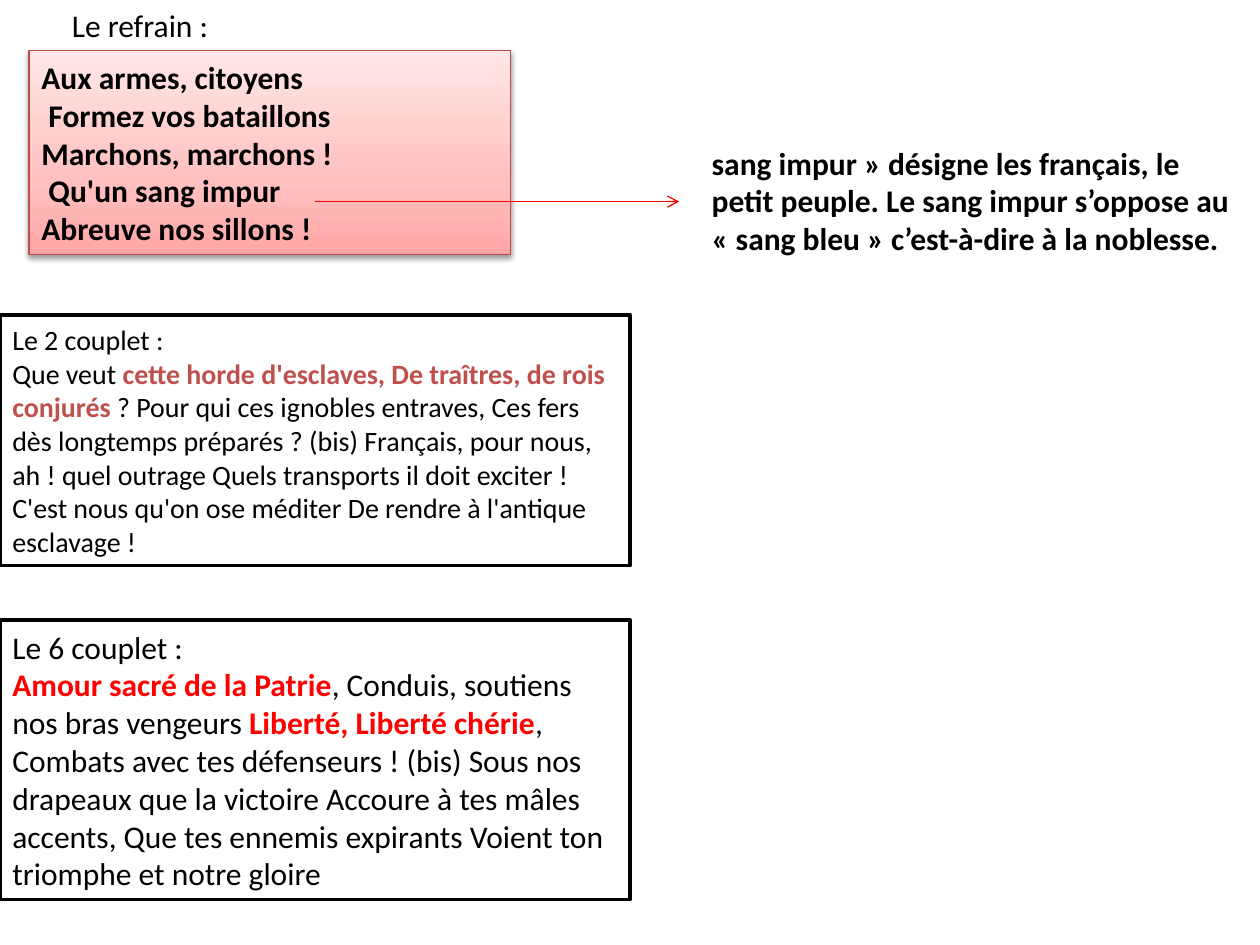
from lxml.etree import SubElement
from pptx import Presentation
from pptx.dml.color import RGBColor
from pptx.enum.shapes import MSO_CONNECTOR, MSO_SHAPE
from pptx.enum.text import MSO_ANCHOR, MSO_AUTO_SIZE, PP_ALIGN
from pptx.oxml import parse_xml
from pptx.oxml.ns import nsdecls, qn
from pptx.util import Inches, Pt

COLUMNS, ROWS = 100, 75
BLACK, WHITE, RED, BRICK = "000000", "FFFFFF", "FF0000", "C0504D"
REFRAIN_LINES = ["Aux armes, citoyens", " Formez vos bataillons", "Marchons, marchons !",
                 " Qu'un sang impur", "Abreuve nos sillons !"]
REFRAIN_STOPS = [(0, "FFA6A5"), (35, "FFC0BF"), (100, "FFE7E7")]
SANG_IMPUR = ("sang impur » désigne les français, le petit peuple. Le sang impur s’oppose au "
              "« sang bleu » c’est-à-dire à la noblesse.")
# Each verse is split so that every second part is highlighted
COUPLET_2 = ["Que veut ", "cette horde d'esclaves, De traîtres, de rois conjurés",
             " ? Pour qui ces ignobles entraves, Ces fers dès longtemps préparés ? (bis) "
             "Français, pour nous, ah ! quel outrage Quels transports il doit exciter ! "
             "C'est nous qu'on ose méditer De rendre à l'antique esclavage !"]
COUPLET_6 = ["", "Amour sacré de la Patrie", ", Conduis, soutiens nos bras vengeurs ",
             "Liberté, Liberté chérie",
             ", Combats avec tes défenseurs ! (bis) Sous nos drapeaux que la victoire "
             "Accoure à tes mâles accents, Que tes ennemis expirants Voient ton triomphe "
             "et notre gloire"]

prs = Presentation()
prs.slide_width, prs.slide_height = Inches(10), Inches(7.5)


def color(hex_value):
    return RGBColor.from_string(hex_value)


def grid(left, top, width, height):
    """Turn columns and rows into slide lengths."""
    column, row = prs.slide_width / COLUMNS, prs.slide_height / ROWS
    return [round(n * unit) for n, unit in zip((left, top, width, height), (column, row) * 2)]


def format_run(run, size, hex_value=BLACK, bold=False):
    run.font.name, run.font.size, run.font.bold = "Calibri", Pt(size), bold
    run.font.color.rgb = color(hex_value)


def write_lines(frame, lines, size, bold=False):
    frame.word_wrap = True
    frame.text = "\n".join(lines)
    for paragraph in frame.paragraphs:
        paragraph.alignment = PP_ALIGN.LEFT
        for run in paragraph.runs:
            format_run(run, size, bold=bold)


def add_frame(slide, box, outline, weight):
    frame = slide.shapes.add_shape(MSO_SHAPE.RECTANGLE, *grid(*box))
    frame.shadow.inherit = False
    frame.line.color.rgb, frame.line.width = color(outline), Pt(weight)
    frame.text_frame.vertical_anchor = MSO_ANCHOR.MIDDLE
    return frame


def add_heading(slide, box):
    heading = slide.shapes.title
    heading.left, heading.top, heading.width, heading.height = grid(*box)
    heading.text_frame.vertical_anchor = MSO_ANCHOR.TOP
    heading.text_frame.auto_size = MSO_AUTO_SIZE.NONE
    write_lines(heading.text_frame, ["Le refrain :"], 18)


def add_refrain(slide, box):
    refrain = add_frame(slide, box, "BF4C48", 0.75)
    write_lines(refrain.text_frame, REFRAIN_LINES, 18, bold=True)

    # Three-stop gradient, dark at the bottom
    refrain.fill.gradient()
    gradient = refrain._element.spPr.find(qn("a:gradFill"))
    stops = "".join(f'<a:gs pos="{pos * 1000}"><a:srgbClr val="{value}"/></a:gs>'
                    for pos, value in REFRAIN_STOPS)
    gradient.getparent().replace(gradient, parse_xml(
        f'<a:gradFill {nsdecls("a")} rotWithShape="1"><a:gsLst>{stops}</a:gsLst>'
        '<a:lin ang="16200000" scaled="0"/></a:gradFill>'))

    # Soft shadow below
    refrain._element.spPr.find(qn("a:effectLst")).append(parse_xml(
        f'<a:outerShdw {nsdecls("a")} blurRad="{Pt(3.1)}" dist="{Pt(1.6)}" dir="5400000" '
        'rotWithShape="0"><a:srgbClr val="000000"><a:alpha val="38000"/></a:srgbClr>'
        '</a:outerShdw>'))


def add_couplet(slide, box, heading, verse, size, highlight):
    couplet = add_frame(slide, box, BLACK, 2)
    couplet.fill.solid()
    couplet.fill.fore_color.rgb = color(WHITE)
    write_lines(couplet.text_frame, [heading, ""], size)
    for index, part in enumerate(verse):
        if part:
            run = couplet.text_frame.paragraphs[1].add_run()
            run.text = part
            marked = index % 2 == 1
            format_run(run, size, highlight if marked else BLACK, marked)


def add_explanation(slide, box, arrow_start, arrow_row):
    note = slide.shapes.add_textbox(*grid(*box))
    write_lines(note.text_frame, [SANG_IMPUR], 18, bold=True)

    # Arrow from the lyric to its explanation
    start, row, end, _ = grid(arrow_start, arrow_row, box[0] - 1.6, 0)
    arrow = slide.shapes.add_connector(MSO_CONNECTOR.STRAIGHT, start, row, end, row)
    arrow.line.color.rgb, arrow.line.width = color(RED), Pt(0.75)
    SubElement(arrow.line._get_or_add_ln(), qn("a:tailEnd"), type="arrow")
    SubElement(arrow._element.spPr, qn("a:effectLst"))


def main():
    slide = prs.slides.add_slide(prs.slide_layouts[5])
    add_heading(slide, (4.7, 0, 20.3, 4))
    add_refrain(slide, (2.3, 4, 38.2, 16.2))
    add_couplet(slide, (0, 49.2, 50, 22.2), "Le 6 couplet :", COUPLET_6, 18, RED)
    add_couplet(slide, (0, 25, 50, 19.9), "Le 2 couplet :", COUPLET_2, 16, BRICK)
    add_explanation(slide, (55.5, 10.9, 44.5, 10.1), 25, 16)
    prs.save("out.pptx")


if __name__ == "__main__":
    main()
